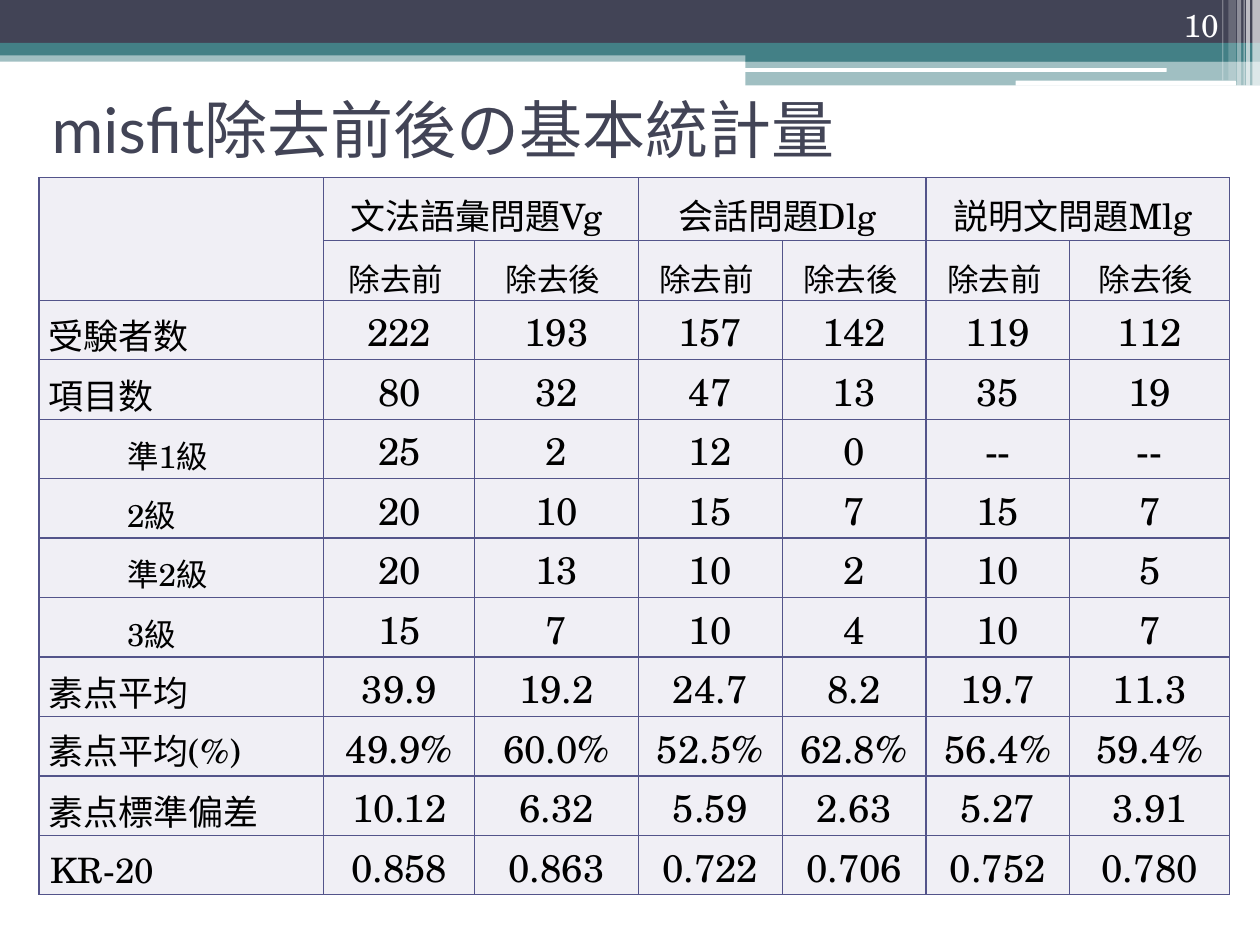
from lxml.etree import SubElement as Sub
from pptx import Presentation
from pptx.dml.color import RGBColor as Rgb
from pptx.enum.shapes import MSO_SHAPE as Shape
from pptx.enum.text import MSO_ANCHOR as Anchor, PP_ALIGN as Align
from pptx.oxml.ns import qn
from pptx.util import Pt

COLORS = {"navy": "424456", "teal": "438086", "white": "FFFFFF",
          "black": "000000", "border": "53548A", "cell": "F0EFF5"}
SERIF = "TeX Gyre Schola"
HEADING = "misfit除去前後の基本統計量"
PAGE_NUMBER = "10"

BANDS = [
    (0, 28.8, 720, 6.5, "teal", 50),
    (0, 0, 720, 24.5, "navy", 100),
    (0, 24.5, 720, 7.2, "teal", 100),
    (426, 28.1, 294, 7.2, "teal", 100),
    (426, 34.8, 294, 14, "teal", 50),
]
GROOVES = [(425.5, 38.9, 241.2, 2.2), (580.3, 46.1, 126, 2.9)]
STRIPES = [
    (715.7, 4.3, 49, 65), (712.1, 2.2, 49, 65), (710.6, 0.7, 49, 60),
    (707, 2.2, 49, 40), (702, 4.3, 46, 20), (698.4, 0.7, 46, 30),
]

TESTS = ["文法語彙問題Vg ", "会話問題Dlg ", "説明文問題Mlg "]
STAGES = ["除去前 ", "除去後 "]
STATISTICS = [
    (" 受験者数", "222 193 157 142 119 112"),
    (" 項目数", "80 32 47 13 35 19"),
    ("準1級", "25 2 12 0 -- --"),
    ("2級", "20 10 15 7 15 7"),
    ("準2級", "20 13 10 2 10 5"),
    ("3級", "15 7 10 4 10 7"),
    (" 素点平均", "39.9 19.2 24.7 8.2 19.7 11.3"),
    (" 素点平均(%)", "49.9% 60.0% 52.5% 62.8% 56.4% 59.4%"),
    (" 素点標準偏差", "10.12 6.32 5.59 2.63 5.27 3.91"),
    (" KR-20", "0.858 0.863 0.722 0.706 0.752 0.780"),
]
COLUMN_WIDTHS = [162.7, 86.4, 93.4, 82.2, 82.2, 82.2, 91.4]
ROW_HEIGHTS = [36] + [34] * (len(STATISTICS) + 1)


def color(name):
    return Rgb.from_string(COLORS[name])


def write(frame, text, size=18, font=SERIF, ink="black", align=Align.LEFT,
          leading=None, indent=None):
    paragraph = frame.paragraphs[0]
    paragraph.alignment = align
    if leading:
        paragraph.line_spacing = Pt(leading)
    if indent:
        paragraph.level = 1
        props = paragraph._p.get_or_add_pPr()
        props.set("marL", str(Pt(indent[0])))
        props.set("indent", str(Pt(indent[1])))
    run = paragraph.add_run()
    run.text = text
    run.font.size = Pt(size)
    run.font.name = font
    run.font.color.rgb = color(ink)


def add_bar(slide, left, top, width, height, ink, opacity=100,
            outline=Shape.RECTANGLE):
    bar = slide.shapes.add_shape(
        outline, Pt(left), Pt(top), Pt(width), Pt(height))
    bar.shadow.inherit = False
    bar.line.fill.background()
    bar.fill.solid()
    bar.fill.fore_color.rgb = color(ink)
    if opacity < 100:
        tone = bar._element.spPr.find(qn("a:solidFill"))[0]
        Sub(tone, qn("a:alpha"), val=str(opacity * 1000))


def style_cell(cell):
    cell.vertical_anchor = Anchor.BOTTOM
    cell.margin_left = cell.margin_right = cell.margin_top = Pt(0.72)
    cell.margin_bottom = 0
    props = cell._tc.get_or_add_tcPr()
    for side in ("lnL", "lnR", "lnT", "lnB"):
        edge = Sub(props, qn(f"a:{side}"), w=str(Pt(0.75)))
        Sub(Sub(edge, qn("a:solidFill")), qn("a:srgbClr"),
            val=COLORS["border"])
    cell.fill.solid()
    cell.fill.fore_color.rgb = color("cell")


def add_decoration(slide):
    for band in BANDS:
        add_bar(slide, *band)
    for groove in GROOVES:
        add_bar(slide, *groove, "white", outline=Shape.ROUNDED_RECTANGLE)
    for left, width, height, opacity in STRIPES:
        add_bar(slide, left, 0, width, height, "white", opacity)


def add_heading(slide):
    heading = slide.shapes.title
    heading.left, heading.top = Pt(22.3), Pt(39.6)
    heading.width, heading.height = Pt(648), Pt(67.7)
    heading.text_frame.vertical_anchor = Anchor.MIDDLE
    write(heading.text_frame, HEADING, size=36, font="Lato", ink="navy")
    slide.shapes._spTree.append(heading._element)


def add_page_number(slide):
    number = slide.shapes.add_textbox(Pt(643.7), 0, Pt(59.8), Pt(28.8))
    number.text_frame.word_wrap = True
    number.text_frame.vertical_anchor = Anchor.BOTTOM
    write(number.text_frame, PAGE_NUMBER, ink="white", align=Align.RIGHT)


def add_statistics(slide):
    table = slide.shapes.add_table(
        len(ROW_HEIGHTS), len(COLUMN_WIDTHS), Pt(22.3), Pt(101.5),
        Pt(sum(COLUMN_WIDTHS)), Pt(sum(ROW_HEIGHTS))).table
    table.first_row = table.horz_banding = False
    for column, width in zip(table.columns, COLUMN_WIDTHS):
        column.width = Pt(width)
    for row, height in zip(table.rows, ROW_HEIGHTS):
        row.height = Pt(height)
    for cell in table.iter_cells():
        style_cell(cell)

    def fill_cell(row, column, text, size, align=Align.CENTER, indent=None):
        write(table.cell(row, column).text_frame, text, size=size,
              align=align, leading=12, indent=indent)

    table.cell(0, 0).merge(table.cell(1, 0))
    for index, test in enumerate(TESTS):
        first = 1 + index * len(STAGES)
        table.cell(0, first).merge(table.cell(0, first + 1))
        fill_cell(0, first, test, 20)
        for offset, stage in enumerate(STAGES):
            fill_cell(1, first + offset, stage, 18)
    for row, (label, values) in enumerate(STATISTICS, 2):
        is_grade = label.endswith("級")
        fill_cell(row, 0, label, 18 if is_grade else 20, Align.LEFT,
                  (36, 13.7) if is_grade else None)
        for column, value in enumerate(values.split(), 1):
            fill_cell(row, column, value, 22)


def main():
    deck = Presentation()
    deck.slide_width, deck.slide_height = Pt(720), Pt(540)
    slide = deck.slides.add_slide(deck.slide_layouts[5])
    add_decoration(slide)
    add_heading(slide)
    add_page_number(slide)
    add_statistics(slide)
    deck.save("out.pptx")


if __name__ == "__main__":
    main()
